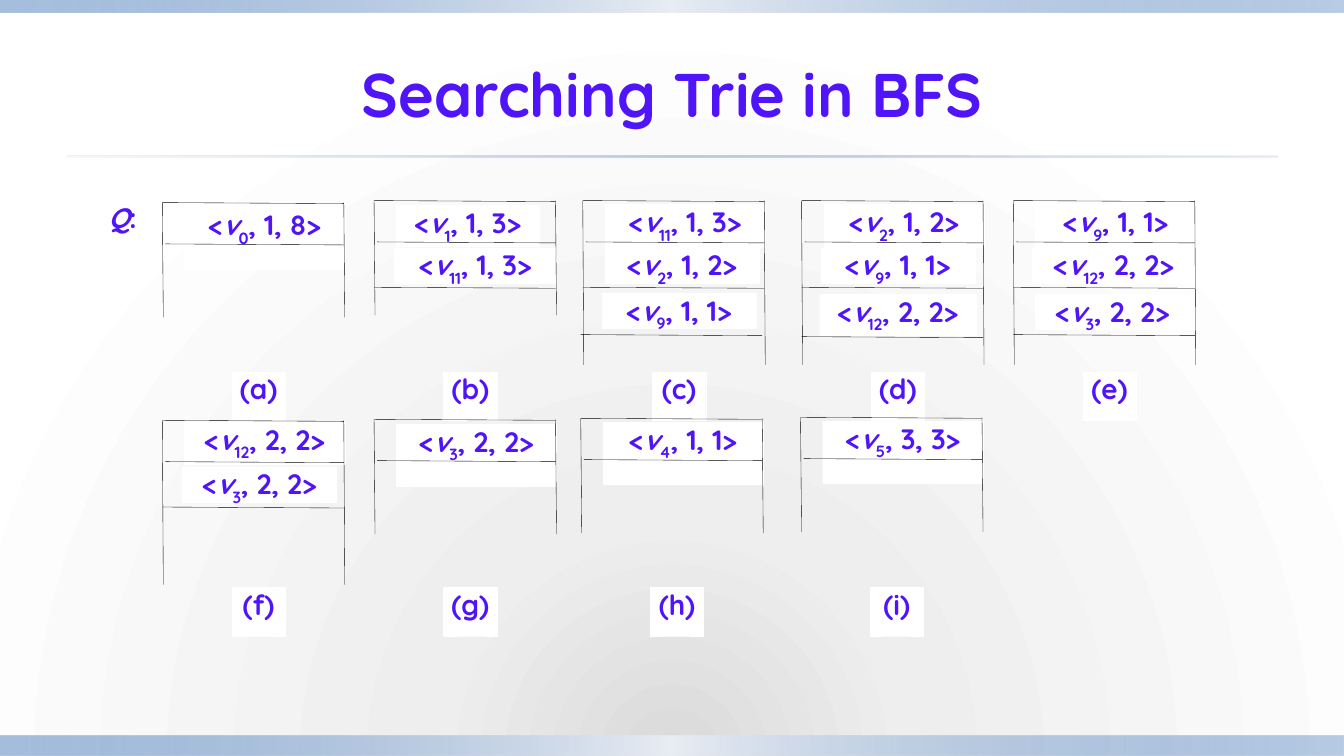
from dataclasses import dataclass

from lxml import etree
from pptx import Presentation
from pptx.dml.color import RGBColor
from pptx.enum.shapes import MSO_CONNECTOR, MSO_SHAPE
from pptx.enum.text import MSO_ANCHOR, PP_ALIGN
from pptx.oxml.ns import qn
from pptx.util import Inches, Pt

RECT, LINE = MSO_SHAPE.RECTANGLE, MSO_CONNECTOR.STRAIGHT
TOP, MIDDLE, CENTER = MSO_ANCHOR.TOP, MSO_ANCHOR.MIDDLE, PP_ALIGN.CENTER
FONT, INK, WHITE, BLACK = "Quicksand", "5014F8", "FFFFFF", "000000"
HAIR = 0.25
WIDTH, SLANT = 1.8, 0.01
RULES = [(0, 0.01), (0.03, 0.42), (0, 0.87)]  # indent, drop
SHORT, LONG = 1.14, 1.63
UPPER, LOWER = 3.69, 5.83  # tops of the tags


@dataclass
class Cell:
    """One entry <v_sub, tail>, placed relative to its queue."""
    sub: str
    tail: str
    x: float = 0.22
    y: float = 0.04
    wide: float = 1.59
    high: float = 0.42


@dataclass
class Queue:
    tag: str
    left: float
    top: float
    depth: float
    tag_y: float
    cells: list[Cell]
    last: tuple = (0, 1.34)  # indent and drop of the fourth rule


@dataclass
class Band:
    left: float
    top: float
    wide: float
    high: float
    stops: list[tuple]


EDGE = [(0, "4F81BD", 50), (50, "E9EDF4", 100), (100, "4F81BD", 40)]
BANDS = [
    Band(0, 7.3, 13.33, 0.2, EDGE),
    Band(0, 0, 13.33, 0.12, EDGE),
    Band(0.67, 1.54, 12, 0.02,
         [(0, "D0D8E8", 20), (50, "4F81BD", 40), (100, "D0D8E8", 50)]),
]
GLOW = [(0, "DADADA", 100), (31, "EEEEEE", 100), (100, "FFFFFF", 100)]

QUEUES = [
    Queue("(a)", 1.61, 2.01, SHORT, UPPER, [Cell("0", "1, 8", y=0.05, high=0.61)]),
    Queue("(b)", 3.71, 1.99, SHORT, UPPER, [
        Cell("1", "1, 3", y=0.05, wide=1.42, high=0.4),
        Cell("11", "1, 3", 0.2, 0.47, 1.61, 0.35)]),
    Queue("(c)", 5.78, 1.99, LONG, UPPER, [
        Cell("11", "1, 3"),
        Cell("2", "1, 2", 0.22, 0.47, 1.53, 0.35),
        Cell("9", "1, 1", 0.19, 0.92, 1.53, 0.35)], (-0.02, 1.34)),
    Queue("(d)", 7.95, 1.99, LONG, UPPER, [
        Cell("2", "1, 2"),
        Cell("9", "1, 1", 0.19, 0.47, 1.53, 0.35),
        Cell("12", "2, 2", 0.18, 0.93, 1.55, 0.41)], (0, 1.36)),
    Queue("(e)", 10.05, 1.99, LONG, UPPER, [
        Cell("9", "1, 1"),
        Cell("12", "2, 2", 0.19, 0.47, 1.61, 0.35),
        Cell("3", "2, 2", 0.22, 0.93, 1.53, 0.35)]),
    Queue("(f)", 1.61, 4.17, LONG, LOWER, [
        Cell("12", "2, 2", y=0.02),
        Cell("3", "2, 2", 0.2, 0.46, 1.53, 0.35)]),
    Queue("(g)", 3.71, 4.16, SHORT, LOWER, [Cell("3", "2, 2", y=0.05, high=0.61)]),
    Queue("(h)", 5.76, 4.15, SHORT, LOWER, [Cell("4", "1, 1", high=0.61)]),
    Queue("(i)", 7.94, 4.14, SHORT, LOWER, [Cell("5", "3, 3", high=0.61)]),
]


def color(code: str) -> RGBColor:
    return RGBColor.from_string(code)


def blend(root, stops: list[tuple], center: dict | None = None) -> None:
    """Set the gradient in root: linear, or round if a center is given."""
    grad = root.find(".//" + qn("a:gradFill"))
    for child in list(grad):
        grad.remove(child)
    items = etree.SubElement(grad, qn("a:gsLst"))
    for pos, code, alpha in stops:
        stop = etree.SubElement(items, qn("a:gs"), pos=str(pos * 1000))
        tone = etree.SubElement(stop, qn("a:srgbClr"), val=code)
        if alpha < 100:
            etree.SubElement(tone, qn("a:alpha"), val=str(alpha * 1000))
    if center:
        ring = etree.SubElement(grad, qn("a:path"), {"path": "circle"})
        etree.SubElement(ring, qn("a:fillToRect"), center)
    else:
        etree.SubElement(grad, qn("a:lin"), ang="0", scaled="0")


def write(par, text: str, size: int = 20, slant: bool = False, base: int = 0) -> None:
    run = par.add_run()
    run.text = text
    style = {"name": FONT, "size": Pt(size), "bold": True, "italic": slant}
    for key, value in style.items():
        setattr(run.font, key, value)
    run.font.color.rgb = color(INK)
    if base:
        run.font._element.set("baseline", str(base * 1000))


def box(slide, left: float, top: float, wide: float, high: float):
    """Add a white box and return its paragraph."""
    shape = slide.shapes.add_shape(RECT, *map(Inches, (left, top, wide, high)))
    shape.shadow.inherit = False
    shape.fill.solid()
    shape.fill.fore_color.rgb = color(WHITE)
    shape.line.color.rgb = color(WHITE)
    shape.line.width = Pt(HAIR)
    frame = shape.text_frame
    form = {"margin_left": 0, "margin_right": 0, "margin_top": 0,
            "margin_bottom": 0, "word_wrap": True, "vertical_anchor": TOP}
    for key, value in form.items():
        setattr(frame, key, value)
    par = frame.paragraphs[0]
    par.alignment = CENTER
    return par


def rule(slide, x1: float, y1: float, x2: float, y2: float) -> None:
    line = slide.shapes.add_connector(LINE, *map(Inches, (x1, y1, x2, y2)))
    line.line.color.rgb = color(BLACK)
    line.line.width = Pt(HAIR)
    etree.SubElement(line._element.spPr, qn("a:effectLst"))


def draw(slide, queue: Queue) -> None:
    left, top, right = queue.left, queue.top, queue.left + WIDTH
    for cell in queue.cells:
        par = box(slide, left + cell.x, top + cell.y, cell.wide, cell.high)
        write(par, "<")
        write(par, "v", slant=True)
        write(par, cell.sub, base=-30)
        write(par, f", {cell.tail}>")
    for indent, drop in [*RULES, queue.last][:len(queue.cells) + 1]:
        end = right + min(indent, 0)
        rule(slide, left + indent, top + drop - SLANT, end, top + drop)
    for side in (left, right):
        rule(slide, side, top, side + SLANT, top + queue.depth)
    write(box(slide, left + 0.69, queue.tag_y, 0.53, 0.48), queue.tag)


def main() -> None:
    deck = Presentation()
    deck.slide_width, deck.slide_height = Inches(13.33), Inches(7.5)
    slide = deck.slides.add_slide(deck.slide_layouts[5])

    # Background and bands
    slide.background.fill.gradient()
    blend(slide._element, GLOW,
          {"l": "50000", "t": "150000", "r": "50000", "b": "0"})
    for band in BANDS:
        shape = slide.shapes.add_shape(
            RECT, *map(Inches, (band.left, band.top, band.wide, band.high)))
        shape.shadow.inherit = False
        shape.line.fill.background()
        shape.fill.gradient()
        blend(shape._element, band.stops)

    # Queues
    for queue in QUEUES:
        draw(slide, queue)
    mark = box(slide, 0.95, 1.99, 0.53, 0.37)
    write(mark, "Q", slant=True)
    write(mark, ":")

    # Title
    title = slide.shapes.title
    place = {"left": 0.67, "top": 0.3, "width": 12, "height": 1.25}
    for key, value in place.items():
        setattr(title, key, Inches(value))
    title.text_frame.vertical_anchor = MIDDLE
    par = title.text_frame.paragraphs[0]
    par.alignment = CENTER
    write(par, "Searching Trie in BFS", size=44)

    deck.save("out.pptx")


if __name__ == "__main__":
    main()
